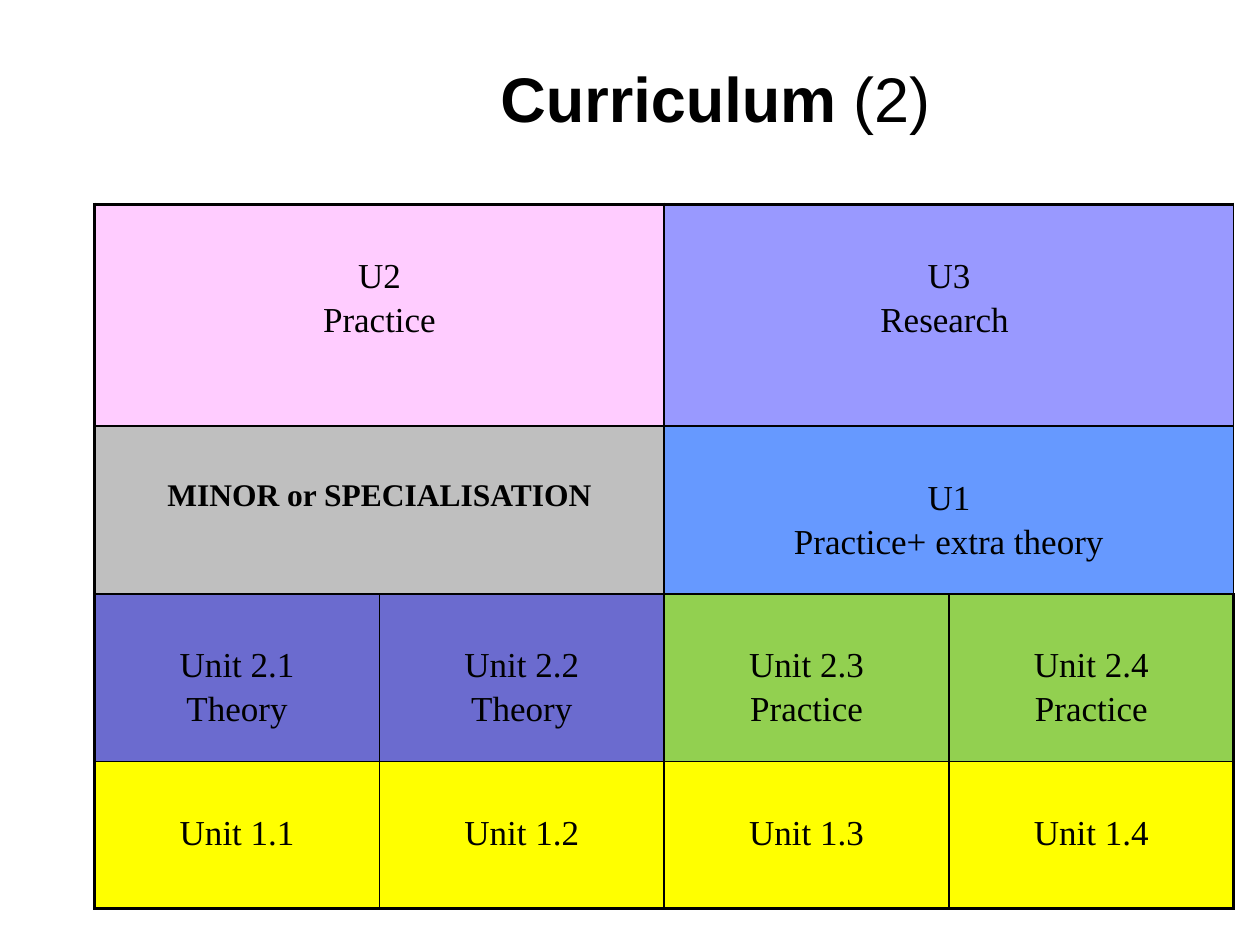
from lxml.etree import SubElement
from pptx import Presentation
from pptx.dml.color import RGBColor
from pptx.enum.text import MSO_ANCHOR, PP_ALIGN
from pptx.oxml.ns import qn
from pptx.util import Cm, Pt

BLACK = RGBColor(0x00, 0x00, 0x00)
PINK = RGBColor(0xFF, 0xCC, 0xFF)
LILAC = RGBColor(0x99, 0x99, 0xFF)
GREY = RGBColor(0xBF, 0xBF, 0xBF)
BLUE = RGBColor(0x66, 0x99, 0xFF)
VIOLET = RGBColor(0x6B, 0x6B, 0xCF)
GREEN = RGBColor(0x92, 0xD0, 0x50)
YELLOW = RGBColor(0xFF, 0xFF, 0x00)

# Content: title runs (text, bold) and curriculum rows (lines, fill, columns spanned)
TITLE = [("Curriculum", True), (" (2) ", False)]
MINOR = "MINOR or SPECIALISATION"
ROWS = [
    [(["U2", "Practice"], PINK, 2), (["U3", "Research "], LILAC, 2)],
    [([MINOR], GREY, 2), (["U1", "Practice+ extra theory"], BLUE, 2)],
    [(["Unit 2.1", "Theory"], VIOLET, 1), (["Unit 2.2", "Theory"], VIOLET, 1),
     (["Unit 2.3", "Practice"], GREEN, 1), (["Unit 2.4", "Practice"], GREEN, 1)],
    [([f"Unit 1.{number}"], YELLOW, 1) for number in range(1, 5)],
]
ROW_HEIGHTS = [4.47, 3.38, 3.38, 2.97]
COLUMN_COUNT = 4
COLUMN_WIDTH = 5.74
THIN, THICK = Pt(1), Pt(2.25)


def add_run(paragraph, text, font_name, size, bold):
    run = paragraph.add_run()
    run.text = text
    run.font.name = font_name
    run.font.size = Pt(size)
    run.font.bold = bold
    run.font.color.rgb = BLACK


def set_borders(cell, row, column):
    """Draw thin inner lines and a thick outer frame."""
    outer_sides = {
        "a:lnL": column == 0,
        "a:lnR": column == COLUMN_COUNT - 1,
        "a:lnT": row == 0,
        "a:lnB": row == len(ROWS) - 1,
    }
    properties = cell._tc.get_or_add_tcPr()
    for position, (side, is_outer) in enumerate(outer_sides.items()):
        line = SubElement(properties, qn(side), w=str(THICK if is_outer else THIN))
        fill = SubElement(line, qn("a:solidFill"))
        SubElement(fill, qn("a:srgbClr"), val=str(BLACK))
        properties.insert(position, line)


def fill_cell(cell, lines, color):
    cell.fill.solid()
    cell.fill.fore_color.rgb = color
    cell.vertical_anchor = MSO_ANCHOR.TOP
    cell.margin_top = Cm(1.06)
    for index, text in enumerate(lines):
        frame = cell.text_frame
        paragraph = frame.add_paragraph() if index else frame.paragraphs[0]
        paragraph.alignment = PP_ALIGN.CENTER
        if index:
            paragraph.space_before = Pt(3)
        is_minor = text == MINOR
        add_run(paragraph, text, "Times New Roman", 18 if is_minor else 20, is_minor)


presentation = Presentation()
presentation.slide_width, presentation.slide_height = Cm(25.4), Cm(19.05)
slide = presentation.slides.add_slide(presentation.slide_layouts[5])

# Title
title = slide.shapes.title
title.left, title.top, title.width, title.height = Cm(3.81), Cm(0.91), Cm(21.59), Cm(3.18)
title.text_frame.vertical_anchor = MSO_ANCHOR.TOP
title.text_frame.margin_top = Cm(0.28)
title_paragraph = title.text_frame.paragraphs[0]
title_paragraph.alignment = PP_ALIGN.CENTER
for text, bold in TITLE:
    add_run(title_paragraph, text, "Arial", 36, bold)

# Curriculum table
table = slide.shapes.add_table(
    len(ROWS), COLUMN_COUNT, Cm(1.91), Cm(4.12),
    Cm(COLUMN_WIDTH * COLUMN_COUNT), Cm(sum(ROW_HEIGHTS)),
).table
table.first_row = False
table.horz_banding = False
for table_column in table.columns:
    table_column.width = Cm(COLUMN_WIDTH)

for row, (height, blocks) in enumerate(zip(ROW_HEIGHTS, ROWS)):
    table.rows[row].height = Cm(height)
    column = 0
    for lines, color, span in blocks:
        cell = table.cell(row, column)
        last_column = column + span - 1
        if span > 1:
            cell.merge(table.cell(row, last_column))
        fill_cell(cell, lines, color)
        column += span
    for column in range(COLUMN_COUNT):
        set_borders(table.cell(row, column), row, column)

presentation.save("out.pptx")
